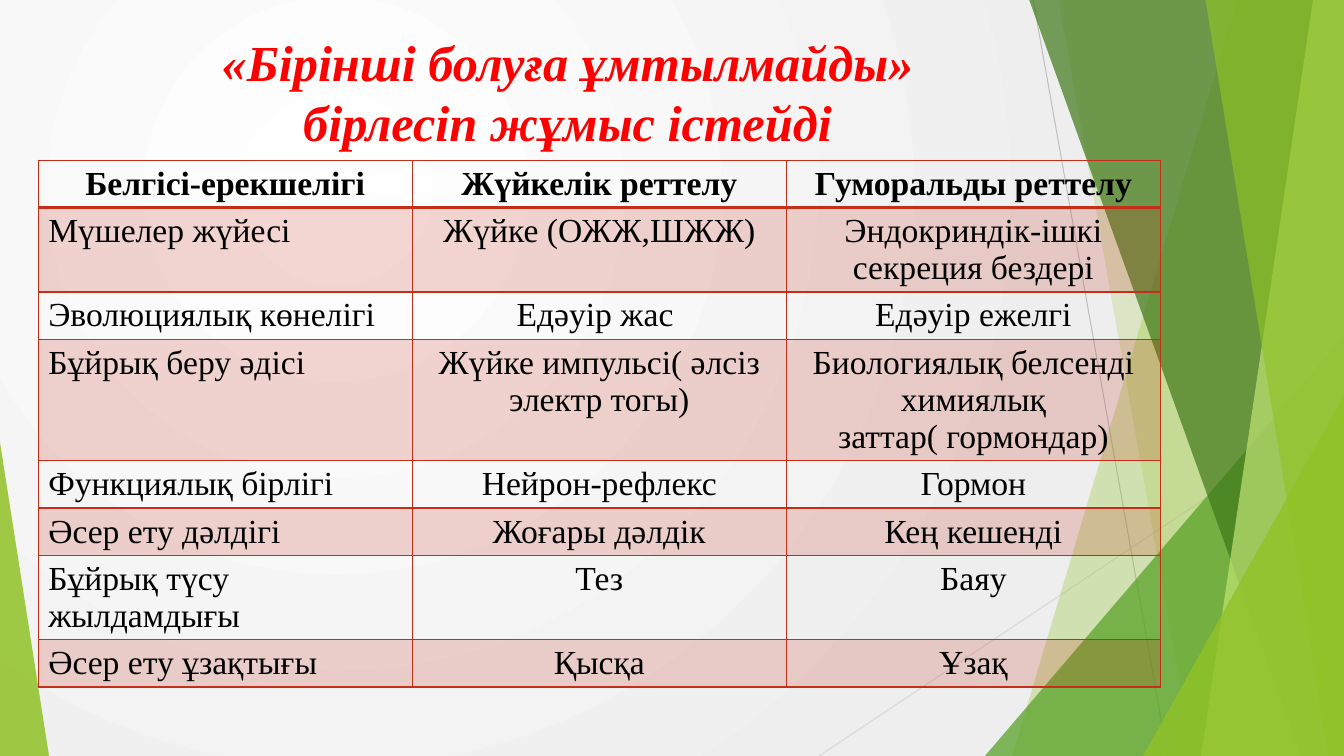
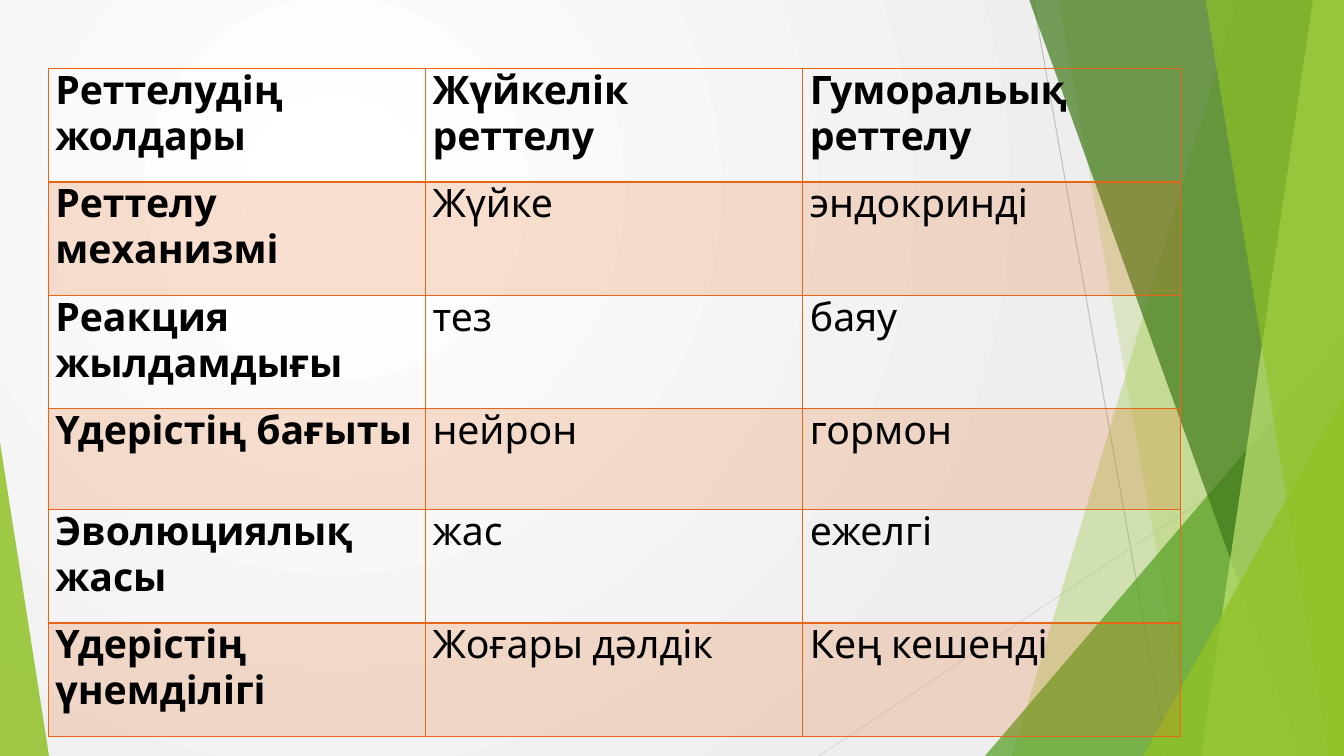
from lxml import etree
from pptx import Presentation
from pptx.dml.color import RGBColor
from pptx.enum.shapes import MSO_CONNECTOR, MSO_SHAPE
from pptx.enum.text import MSO_ANCHOR, MSO_AUTO_SIZE, PP_ALIGN
from pptx.oxml import parse_xml
from pptx.oxml.ns import nsdecls, qn
from pptx.util import Pt

WIDTH, HEIGHT = 960, 540
TITLE_ONLY, BLANK = 5, 6
GREEN, RED, ORANGE = "90C226", "C42F1A", "E76618"
SERIF, SANS = "Times New Roman", "Karla"

REGULATION_ROWS = [
    ("Белгісі-ерекшелігі", "Жүйкелік реттелу", "Гуморальды реттелу"),
    ("Мүшелер жүйесі", "Жүйке (ОЖЖ,ШЖЖ)", "Эндокриндік-ішкі секреция бездері"),
    ("Эволюциялық көнелігі", "Едәуір жас ", "Едәуір ежелгі"),
    ("Бұйрық беру әдісі", "Жүйке импульсі( әлсіз электр тогы)",
     "Биологиялық белсенді химиялық заттар( гормондар)"),
    ("Функциялық бірлігі", "Нейрон-рефлекс", "Гормон"),
    ("Әсер ету дәлдігі", "Жоғары дәлдік", "Кең кешенді"),
    ("Бұйрық түсу жылдамдығы", "Тез", "Баяу"),
    ("Әсер ету ұзақтығы", "Қысқа", "Ұзақ"),
]
PATHWAY_ROWS = [
    ("Реттелудің жолдары", "Жүйкелік реттелу", "Гуморальық реттелу"),
    ("Реттелу механизмі", "Жүйке", "эндокринді"),
    ("Реакция жылдамдығы", "тез", "баяу"),
    ("Үдерістің бағыты", "нейрон", "гормон"),
    ("Эволюциялық жасы", "жас", "ежелгі"),
    ("Үдерістің үнемділігі", "Жоғары дәлдік", "Кең кешенді"),
]


def rgb(color):
    return RGBColor.from_string(color)


def set_alpha(el, percent):
    clr = el.find(".//" + qn("a:srgbClr"))
    etree.SubElement(clr, qn("a:alpha")).set("val", str(percent * 1000))


def paint(sp, color, alpha):
    sp.shadow.inherit = False
    sp.fill.solid()
    sp.fill.fore_color.rgb = rgb(color)
    sp.line.fill.background()
    set_alpha(sp.element, alpha)


def add_line(slide, x1, y1, x2, y2, color):
    line = slide.shapes.add_connector(
        MSO_CONNECTOR.STRAIGHT, Pt(x1), Pt(y1), Pt(x2), Pt(y2))
    line.line.color.rgb = rgb(color)
    line.line.width = Pt(0.75)
    etree.SubElement(line.element.spPr, qn("a:effectLst"))


def add_band(slide, top_x, bottom_x, color, alpha):
    builder = slide.shapes.build_freeform(Pt(top_x), Pt(-0.6))
    builder.add_line_segments([
        (Pt(WIDTH), Pt(-0.6)), (Pt(WIDTH), Pt(HEIGHT)), (Pt(bottom_x), Pt(HEIGHT))])
    paint(builder.convert_to_shape(), color, alpha)


def add_corner(slide, left, top, width, apex, color, alpha):
    sp = slide.shapes.add_shape(
        MSO_SHAPE.ISOSCELES_TRIANGLE, Pt(left), Pt(top), Pt(width), Pt(HEIGHT - top))
    sp.adjustments[0] = apex
    paint(sp, color, alpha)


def set_background(master):
    fill = master.background.fill
    fill.gradient()
    for stop, position, color in zip(fill.gradient_stops, (0, 1), ("FFFFFF", "EEEEEE")):
        stop.position = position
        stop.color.rgb = rgb(color)
    lin = master.element.find(".//" + qn("p:bg")).find(".//" + qn("a:lin"))
    lin.getparent().replace(lin, parse_xml(
        f'<a:path {nsdecls("a")} path="circle">'
        '<a:fillToRect l="50000" t="50000" r="100000" b="100000"/></a:path>'))


def decorate_master(prs, slide):
    master = prs.slide_master
    set_background(master)
    add_line(slide, 738, 0, 834, HEIGHT, "BFBFBF")
    add_line(slide, WIDTH, 290, 585, HEIGHT, "D9D9D9")
    add_band(slide, 884, 723, GREEN, 30)
    add_band(slide, 756, 852, GREEN, 20)
    add_corner(slide, 703.5, 240, 256.5, 1, "54A021", 72)
    add_band(slide, 735, 929.5, "3F7819", 70)
    add_band(slide, 938, 858, "C0E474", 70)
    add_band(slide, 861, 949, GREEN, 65)
    add_corner(slide, 816.5, 283, 143.5, 1, GREEN, 80)
    add_corner(slide, 0, 316, 35, 0, GREEN, 85)
    decor = [sp.element for sp in slide.shapes if not sp.is_placeholder]
    for i, el in enumerate(decor):
        el.find(".//" + qn("p:cNvPr")).set("id", str(100 + i))
        master.shapes.element.insert(2 + i, el)


def set_title(slide, text):
    sp = slide.shapes.title
    sp.left, sp.top, sp.width, sp.height = Pt(53), Pt(19), Pt(705), Pt(133)
    tf = sp.text_frame
    tf.text = text
    tf.word_wrap = True
    tf.auto_size = MSO_AUTO_SIZE.NONE
    tf.vertical_anchor = MSO_ANCHOR.TOP
    p = tf.paragraphs[0]
    p.alignment = PP_ALIGN.CENTER
    p.line_spacing = Pt(43)
    font = p.font
    font.name, font.size, font.bold, font.italic = SERIF, Pt(36), True, True
    font.color.rgb = rgb("FF0000")


def set_borders(tc, color, is_header):
    widths = {"lnL": 1, "lnR": 1, "lnT": 1, "lnB": 2 if is_header else 1}
    for i, (side, width) in enumerate(widths.items()):
        tc.get_or_add_tcPr().insert(i, parse_xml(
            f'<a:{side} {nsdecls("a")} w="{Pt(width)}"><a:solidFill>'
            f'<a:srgbClr val="{color}"/></a:solidFill></a:{side}>'))


def add_grid(slide, rows, left, top, col_width, row_heights, color, font_name, size,
             centred=False, bold_labels=False, margins=(7.2, 3.6)):
    cols = len(rows[0])
    frame = slide.shapes.add_table(len(rows), cols, Pt(left), Pt(top),
                                   Pt(col_width * cols), Pt(sum(row_heights)))
    table = frame.table
    table.first_row = table.horz_banding = False
    for col in table.columns:
        col.width = Pt(col_width)
    for row, height in zip(table.rows, row_heights):
        row.height = Pt(height)
    for i, (cell, tc) in enumerate(zip(table.iter_cells(), frame.element.iter(qn("a:tc")))):
        r, c = divmod(i, cols)
        cell.text = rows[r][c]
        cell.margin_left = cell.margin_right = Pt(margins[0])
        cell.margin_top = cell.margin_bottom = Pt(margins[1])
        p = cell.text_frame.paragraphs[0]
        p.alignment = PP_ALIGN.CENTER if centred and (r == 0 or c > 0) else PP_ALIGN.LEFT
        p.font.name, p.font.size = font_name, Pt(size)
        p.font.bold = r == 0 or (bold_labels and c == 0)
        p.font.color.rgb = rgb("000000")
        if r % 2:
            cell.fill.solid()
            cell.fill.fore_color.rgb = rgb(color)
            set_alpha(tc.tcPr, 20)
        else:
            cell.fill.background()
        set_borders(tc, color, r == 0)


def main():
    prs = Presentation()
    prs.slide_width, prs.slide_height = Pt(WIDTH), Pt(HEIGHT)

    slide = prs.slides.add_slide(prs.slide_layouts[TITLE_ONLY])
    decorate_master(prs, slide)
    set_title(slide, "«Бірінші болуға ұмтылмайды»\vбірлесіп жұмыс істейді")
    add_grid(slide, REGULATION_ROWS, 27.3, 114.5, 267.2, [33] * 8, RED, SERIF, 24,
             centred=True)

    slide = prs.slides.add_slide(prs.slide_layouts[BLANK])
    add_grid(slide, PATHWAY_ROWS, 34.5, 49, 269.5, [81, 81, 81, 72, 81, 81], ORANGE,
             SANS, 28, bold_labels=True, margins=(5, 0))

    prs.save("out.pptx")


if __name__ == "__main__":
    main()
